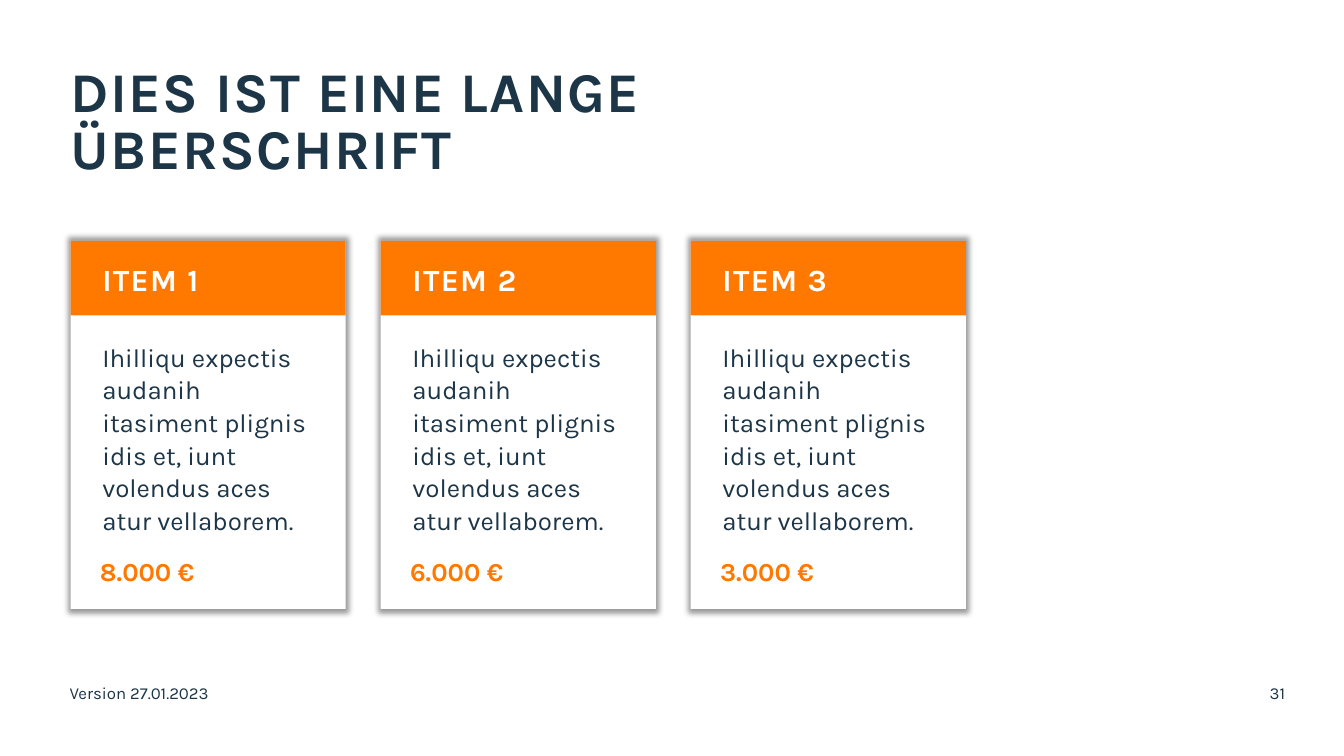
from lxml import etree
from pptx import Presentation
from pptx.dml.color import RGBColor
from pptx.enum import shapes, text
from pptx.oxml import ns
from pptx.util import Pt

NAVY = RGBColor(0x1C, 0x35, 0x47)
ORANGE = RGBColor(0xFF, 0x78, 0x00)
WHITE = RGBColor(0xFF, 0xFF, 0xFF)
LEFT = text.PP_ALIGN.LEFT
RIGHT = text.PP_ALIGN.RIGHT
TOP = text.MSO_ANCHOR.TOP
MIDDLE = text.MSO_ANCHOR.MIDDLE

BODY = ["Ihilliqu expectis audanih itasiment plignis idis et, iunt volendus aces",
        "atur vellaborem."]
ITEMS = [("ITEM 1", "8.000 €"), ("ITEM 2", "6.000 €"), ("ITEM 3", "3.000 €")]


def write(shape, lines, size, color, bold=False, track=0, lead=1.0,
          align=LEFT, anchor=TOP, inset=(0, 0, 0, 0)):
    frame = shape.text_frame
    frame.word_wrap = True
    frame.auto_size = text.MSO_AUTO_SIZE.NONE
    frame.vertical_anchor = anchor
    (frame.margin_left, frame.margin_top,
     frame.margin_right, frame.margin_bottom) = map(Pt, inset)
    frame.text = "\n".join(lines)
    for para in frame.paragraphs:
        para.alignment = align
        para.line_spacing = lead
        para.space_before = para.space_after = Pt(0)
        font = para.font
        font.name, font.size, font.bold = "Karla", Pt(size), bold
        font.color.rgb = color
        if track:
            para._p.pPr.find(ns.qn("a:defRPr")).set("spc", str(track * 100))


def label(slide, box, *args, **style):
    write(slide.shapes.add_textbox(*map(Pt, box)), *args, **style)


def panel(slide, box, fill):
    shape = slide.shapes.add_shape(shapes.MSO_SHAPE.RECTANGLE, *map(Pt, box))
    shape.shadow.inherit = False
    shape.fill.solid()
    shape.fill.fore_color.rgb = fill
    shape.line.fill.background()
    return shape


def shade(shape):
    """Soft black shadow, slightly larger than the shape."""
    effects = shape._element.spPr.find(ns.qn("a:effectLst"))
    outer = etree.SubElement(effects, ns.qn("a:outerShdw"), blurRad=str(Pt(4)),
                             sx="102000", sy="102000", algn="ctr", rotWithShape="0")
    tint = etree.SubElement(outer, ns.qn("a:srgbClr"), val="000000")
    etree.SubElement(tint, ns.qn("a:alpha"), val="40000")


def heading(slide, box):
    title = slide.shapes.title
    title.left, title.top, title.width, title.height = map(Pt, box)
    write(title, ["DIES IST EINE LANGE ÜBERSCHRIFT"], 40, NAVY,
          bold=True, track=1, lead=0.85)


def card(slide, box, name, price):
    x, y, w, h = box
    # White body with shadow
    base = panel(slide, box, WHITE)
    shade(base)
    write(base, BODY, 18.5, NAVY, lead=1.05, inset=(22.7, 70.6, 20, 0))
    # Orange head
    head = panel(slide, (x, y, w, 53.3), ORANGE)
    write(head, [name], 22, WHITE, bold=True, track=1, lead=1.05,
          anchor=MIDDLE, inset=(22.7, 8.5, 8.5, 8.5))
    # Price
    label(slide, (x + 21, y + h - 39, w - 37.5, 18.7), [price], 18.5, ORANGE,
          bold=True, lead=1.05)


def footer(slide, box):
    x, y, w, h = box
    label(slide, (x, y, 592.5, h), ["Version 27.01.2023"], 12, NAVY)
    label(slide, (x + w - 155, y, 155, h), ["31"], 12, NAVY, align=RIGHT)


def main():
    deck = Presentation()
    deck.slide_width, deck.slide_height = Pt(960), Pt(540)
    slide = deck.slides.add_slide(deck.slide_layouts[5])
    heading(slide, (50.4, 47.5, 590.4, 80.6))
    for i, item in enumerate(ITEMS):
        card(slide, (50.4 + i * 221.5, 172.1, 196.6, 262.8), *item)
    footer(slide, (49.7, 487.4, 868.3, 28.8))
    deck.save("out.pptx")


if __name__ == "__main__":
    main()
